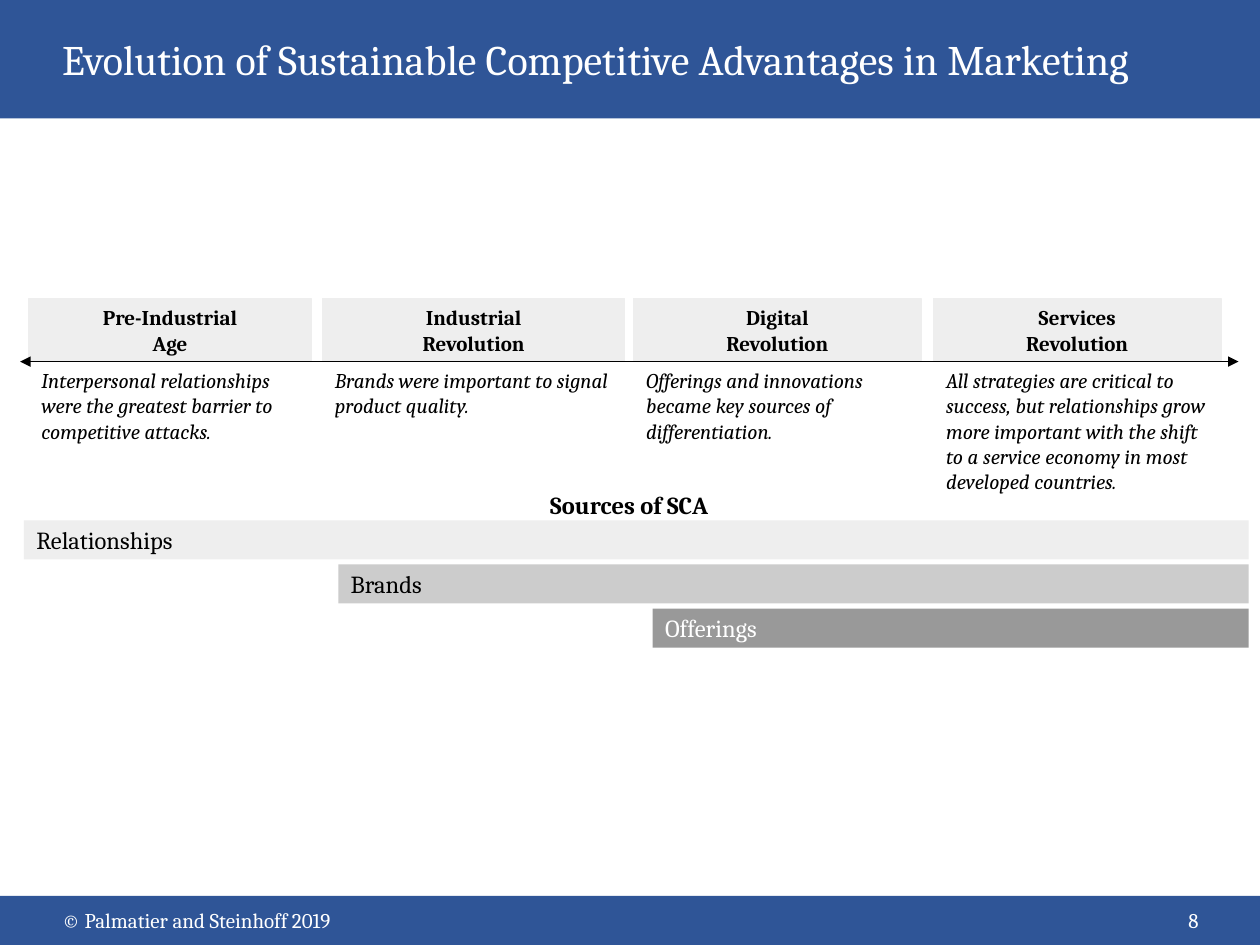
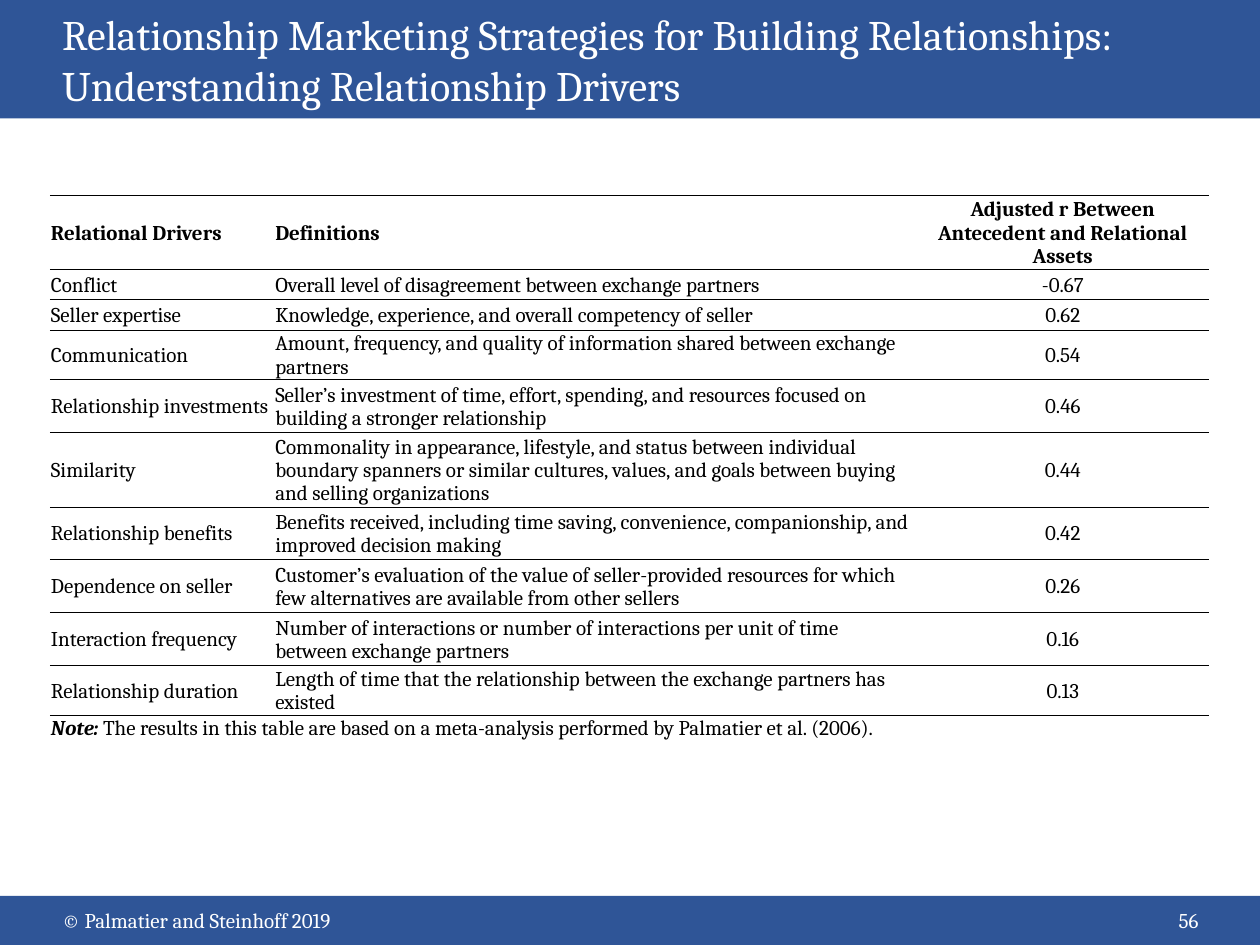
from collections import namedtuple
from dataclasses import dataclass

from lxml import etree
from pptx import Presentation
from pptx import util as u
from pptx.dml.color import RGBColor
from pptx.enum import shapes, text
from pptx.oxml import ns


@dataclass(frozen=True)
class Theme:
    font: str = "Cambria"
    band: str = "2F5597"
    ink: str = "000000"
    paper: str = "FFFFFF"
    grays: tuple = ("EEEEEE", "CCCCCC", "999999")
    title: int = 24
    source: int = 14
    body: int = 12
    rule: float = 0.5
    outline: float = 0.75


T = Theme()
LEFT, CENTER, RIGHT = (text.PP_ALIGN.LEFT, text.PP_ALIGN.CENTER,
                       text.PP_ALIGN.RIGHT)
TOP, MIDDLE = text.MSO_ANCHOR.TOP, text.MSO_ANCHOR.MIDDLE
NO_STYLE = "{2D5ABB26-0587-4C30-8999-92F81FD0307C}"

# The slide is a grid of 100 columns by 75 rows
WIDTH, HEIGHT = u.Inches(10), u.Inches(7.5)
COL, ROW = WIDTH / 100, HEIGHT / 75


class Box(namedtuple("Box", "x y w h")):
    """An area in columns and rows."""

    def sub(self, x, y, w, h):
        return Box(self.x + x, self.y + y, w, h)

    def emu(self):
        return (round(self.x * COL), round(self.y * ROW),
                round(self.w * COL), round(self.h * ROW))


SLIDE = Box(0, 0, 100, 75)
HEADER = SLIDE.sub(0, 0, 100, 9.4)
FOOTER = SLIDE.sub(0, 71.1, 100, 3.9)
ERAS_BOX = SLIDE.sub(1.6, 23.7, 96.7, 15.9)
SOURCES_BOX = SLIDE.sub(0.8, 38.4, 98.3, 12.9)
TABLE_BOX = SLIDE.sub(3.95, 15.5, 92.1, 44)

# Heading, column start, column width, description
ERAS = [
    ("Pre-Industrial Age", 0.7, 22.4,
     "Interpersonal relationships were the greatest barrier to competitive "
     "attacks."),
    ("Industrial Revolution", 24, 24,
     "Brands were important to signal product quality."),
    ("Digital Revolution", 48.7, 22.8,
     "Offerings and innovations became key sources of differentiation."),
    ("Services Revolution", 72.5, 22.8,
     "All strategies are critical to success, but relationships grow more "
     "important with the shift to a service economy in most developed "
     "countries."),
]
SOURCES = [("Relationships", T.ink), ("Brands", T.ink), ("Offerings", T.paper)]

# Row height, driver, definition, adjusted r
DRIVERS = [
    (5.9, "Relational Drivers", "Definitions",
     "Adjusted r Between Antecedent and Relational Assets"),
    (2.4, "Conflict",
     "Overall level of disagreement between exchange partners", "-0.67"),
    (2.4, "Seller expertise",
     "Knowledge, experience, and overall competency of seller", "0.62"),
    (2.4, "Communication",
     "Amount, frequency, and quality of information shared between exchange "
     "partners", "0.54"),
    (4.2, "Relationship investments",
     "Seller’s investment of time, effort, spending, and resources focused on "
     "building a stronger relationship", "0.46"),
    (5.9, "Similarity",
     "Commonality in appearance, lifestyle, and status between individual "
     "boundary spanners or similar cultures, values, and goals between buying "
     "and selling organizations", "0.44"),
    (4.2, "Relationship benefits",
     "Benefits received, including time saving, convenience, companionship, "
     "and improved decision making", "0.42"),
    (4.2, "Dependence on seller",
     "Customer’s evaluation of the value of seller-provided resources for "
     "which few alternatives are available from other sellers", "0.26"),
    (4.2, "Interaction frequency",
     "Number of interactions or number of interactions per unit of time "
     "between exchange partners", "0.16"),
    (2.4, "Relationship duration",
     "Length of time that the relationship between the exchange partners has "
     "existed", "0.13"),
]
NOTE = ("Note: ", "The results in this table are based on a meta-analysis "
                  "performed by Palmatier et al. (2006).")
NOTE_HEIGHT = 1.6
DRIVER_COLS = (17.8, 51, 23.2)


def rgb(color):
    return RGBColor.from_string(color)


def write(tf, words, size=T.body, color=T.ink, bold=False, italic=False,
          align=LEFT, spacing=None):
    """Add words to the first paragraph of a text frame."""
    p = tf.paragraphs[0]
    p.alignment = align
    if spacing:
        p.line_spacing = spacing
    for i, line in enumerate(words.split("\n")):
        if i:
            p.add_line_break()
        r = p.add_run()
        r.text = line
        f = r.font
        f.name, f.size, f.bold, f.italic = T.font, u.Pt(size), bold, italic
        f.color.rgb = rgb(color)


def add_text(s, box, words, anchor=TOP, **fmt):
    tf = s.shapes.add_textbox(*box.emu()).text_frame
    tf.word_wrap = True
    tf.vertical_anchor = anchor
    write(tf, words, **fmt)


def add_rect(s, box, fill, outline=False):
    sp = s.shapes.add_shape(shapes.MSO_SHAPE.RECTANGLE, *box.emu())
    sp.shadow.inherit = False
    sp.fill.solid()
    sp.fill.fore_color.rgb = rgb(fill)
    if outline:
        sp.line.color.rgb = rgb(fill)
        sp.line.width = u.Pt(T.outline)
    else:
        sp.line.fill.background()
    return sp


def add_double_arrow(s, box):
    x, y, w, _ = box.emu()
    line = s.shapes.add_connector(shapes.MSO_CONNECTOR.STRAIGHT,
                                  x, y, x + w, y)
    line.line.color.rgb = rgb(T.ink)
    line.line.width = u.Pt(T.rule)
    ln = line.line._get_or_add_ln()
    for end in ("a:headEnd", "a:tailEnd"):
        etree.SubElement(ln, ns.qn(end), type="triangle")
    etree.SubElement(line._element.spPr, ns.qn("a:effectLst"))


def rule_cell(cell, sides):
    """Draw thin rules on the given sides, in the order T, B."""
    tc_pr = cell._tc.get_or_add_tcPr()
    for i, side in enumerate(sides):
        ln = etree.Element(ns.qn("a:ln" + side), w=str(u.Pt(T.rule)))
        fill = etree.SubElement(ln, ns.qn("a:solidFill"))
        etree.SubElement(fill, ns.qn("a:srgbClr"), val=T.ink)
        tc_pr.insert(i, ln)


def format_cell(cell, sides="TB"):
    cell.fill.background()
    cell.vertical_anchor = MIDDLE
    cell.margin_left = cell.margin_right = cell.margin_top = u.Inches(0.01)
    cell.margin_bottom = 0
    rule_cell(cell, sides)


def draw_header(s, box, title):
    add_rect(s, box, T.band)
    add_text(s, box.sub(3.95, 0, 92.1, box.h), title, MIDDLE,
             size=T.title, color=T.paper)


def draw_footer(s, box, number):
    add_rect(s, box, T.band)
    add_text(s, box.sub(3.95, 0, 27.6, box.h),
             "© Palmatier and Steinhoff 2019", MIDDLE, color=T.paper)
    add_text(s, box.sub(88.2, 0, 7.9, box.h), str(number), MIDDLE,
             color=T.paper, align=RIGHT)


def draw_eras(s, box):
    head_h, label_w = 4.9, 14
    for name, x, w, about in ERAS:
        add_rect(s, box.sub(x, 0, w, head_h), T.grays[0], outline=True)
        add_text(s, box.sub(x + (w - label_w) / 2, 0, label_w, head_h), name,
                 bold=True, align=CENTER)
        add_text(s, box.sub(x, head_h + 0.1, w, box.h - head_h), about,
                 italic=True)
    add_double_arrow(s, box.sub(0, head_h + 0.1, box.w, 0))


def draw_sources(s, box):
    add_text(s, box.sub(0, 0, box.w, 3.3), "Sources of SCA",
             size=T.source, bold=True, align=CENTER)
    # Each bar starts one era later and ends at the right edge
    for i, ((name, color), gray) in enumerate(zip(SOURCES, T.grays)):
        x = 1.1 + 24.95 * i
        sp = add_rect(s, box.sub(x, 2.9 + 3.5 * i, box.w - x, 3.1), gray)
        sp.text_frame.vertical_anchor = MIDDLE
        write(sp.text_frame, name, size=T.source, color=color)


def draw_drivers(s, box):
    last = len(DRIVERS)
    frame = s.shapes.add_table(last + 1, len(DRIVER_COLS), *box.emu())
    table = frame.table
    table.first_row = table.horz_banding = False
    table._tbl.tblPr.find(ns.qn("a:tableStyleId")).text = NO_STYLE
    for column, w in zip(table.columns, DRIVER_COLS):
        column.width = round(w * COL)
    for i, (h, *cells) in enumerate(DRIVERS):
        table.rows[i].height = round(h * ROW)
        for j, words in enumerate(cells):
            cell = table.cell(i, j)
            format_cell(cell)
            write(cell.text_frame, words, bold=i == 0, spacing=0.96,
                  align=CENTER if j == 2 else LEFT)
    # Note across the whole last row
    table.rows[last].height = round(NOTE_HEIGHT * ROW)
    note = table.cell(last, 0)
    note.merge(table.cell(last, len(DRIVER_COLS) - 1))
    for j in range(len(DRIVER_COLS)):
        format_cell(table.cell(last, j), "T")
    write(note.text_frame, NOTE[0], bold=True, italic=True)
    write(note.text_frame, NOTE[1], spacing=0.96)


def add_slide(prs, title, number, *regions):
    s = prs.slides.add_slide(prs.slide_layouts[6])
    draw_footer(s, FOOTER, number)
    draw_header(s, HEADER, title)
    for draw, box in regions:
        draw(s, box)


def main():
    prs = Presentation()
    prs.slide_width, prs.slide_height = WIDTH, HEIGHT
    add_slide(prs,
              "Evolution of Sustainable Competitive Advantages in Marketing",
              8, (draw_eras, ERAS_BOX), (draw_sources, SOURCES_BOX))
    add_slide(prs,
              "Relationship Marketing Strategies for Building Relationships:\n"
              "Understanding Relationship Drivers",
              56, (draw_drivers, TABLE_BOX))
    prs.save("out.pptx")


if __name__ == "__main__":
    main()
